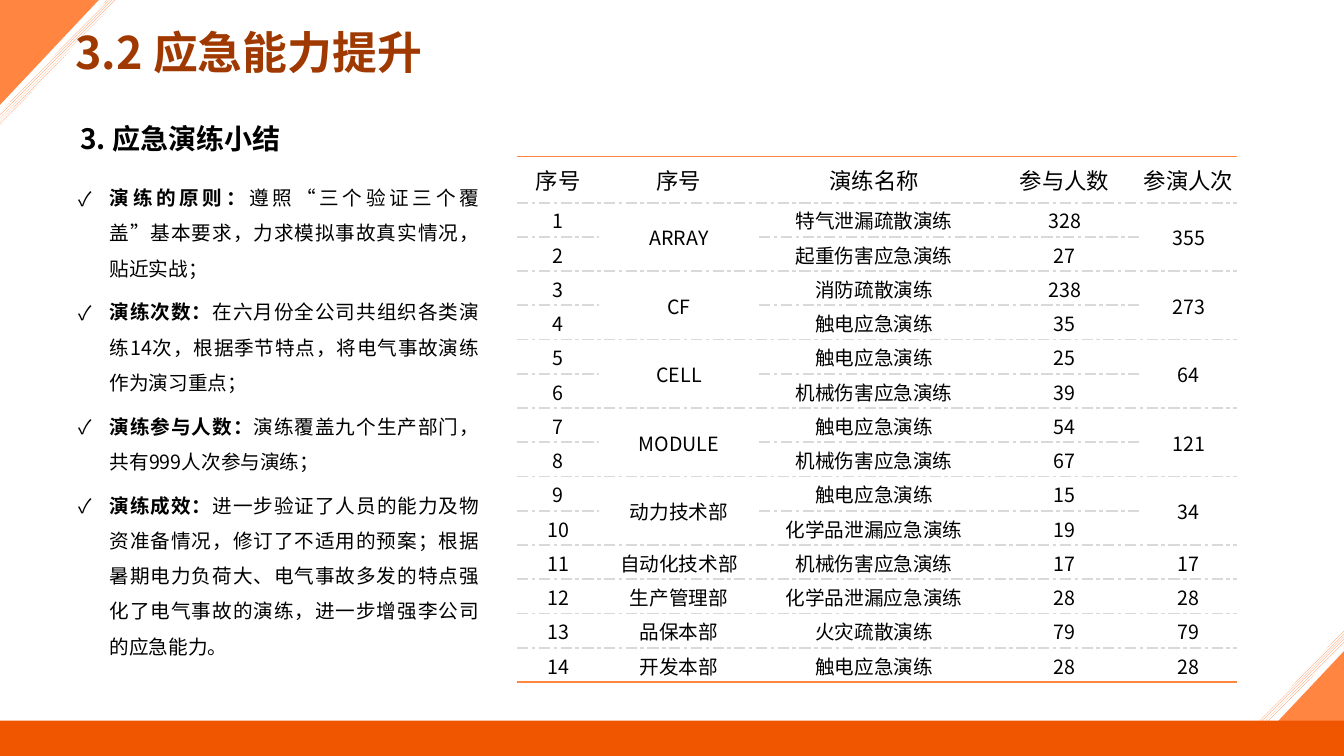
"""Builds the slide that sums up the emergency drills."""
from lxml import etree
from pptx import Presentation
from pptx.dml.color import RGBColor
from pptx.enum.dml import MSO_PATTERN
from pptx.enum.shapes import MSO_SHAPE
from pptx.enum.text import MSO_ANCHOR, PP_ALIGN
from pptx.oxml.ns import qn
from pptx.util import Inches, Pt

TITLE = "3.2 应急能力提升"
HEADING = "3. 应急演练小结"
POINTS = [
    ("演练的原则：", "遵照“三个验证三个覆盖”基本要求，力求模拟事故真实情况，贴近实战；"),
    ("演练次数：", "在六月份全公司共组织各类演练14次，根据季节特点，将电气事故演练作为演习重点；"),
    ("演练参与人数：", "演练覆盖九个生产部门，共有999人次参与演练；"),
    ("演练成效：", "进一步验证了人员的能力及物资准备情况，修订了不适用的预案；根据暑期电力负荷大、"
     "电气事故多发的特点强化了电气事故的演练，进一步增强李公司的应急能力。"),
]
HEADERS = ["序号", "序号", "演练名称", "参与人数", "参演人次"]
DEPARTMENTS = [
    ("ARRAY", 355, [("特气泄漏疏散演练", 328), ("起重伤害应急演练", 27)]),
    ("CF", 273, [("消防疏散演练", 238), ("触电应急演练", 35)]),
    ("CELL", 64, [("触电应急演练", 25), ("机械伤害应急演练", 39)]),
    ("MODULE", 121, [("触电应急演练", 54), ("机械伤害应急演练", 67)]),
    ("动力技术部", 34, [("触电应急演练", 15), ("化学品泄漏应急演练", 19)]),
    ("自动化技术部", 17, [("机械伤害应急演练", 17)]),
    ("生产管理部", 28, [("化学品泄漏应急演练", 28)]),
    ("品保本部", 79, [("火灾疏散演练", 79)]),
    ("开发本部", 28, [("触电应急演练", 28)]),
]
COLUMN_WIDTHS = [0.81, 1.59, 2.28, 1.5, 0.96]
HEADER_HEIGHT, ROW_HEIGHT = 0.46, 0.34
TABLE_LEFT, TABLE_TOP = 5.13, 1.55
SLIDE_WIDTH, SLIDE_HEIGHT = 13.33, 7.5
CORNER = [(0, 0), (0.98, 0), (0, 1.04)]
STRIPE = [(1.06, 0), (1.16, 0), (0, 1.25), (0, 1.12)]

FONT = "Noto Sans CJK SC"
NO_GRID_STYLE = "{2D5ABB26-0587-4C30-8999-92F81FD0307C}"
BLACK = RGBColor(0x00, 0x00, 0x00)
WHITE = RGBColor(0xFF, 0xFF, 0xFF)
BROWN = RGBColor(0xA0, 0x39, 0x00)
ORANGE = RGBColor(0xFF, 0x85, 0x41)
DEEP_ORANGE = RGBColor(0xF0, 0x56, 0x00)
GRAY = RGBColor(0xD9, 0xD9, 0xD9)
OUTER_RULE = (ORANGE, 1, "solid")
INNER_RULE = (GRAY, 1.5, "lgDashDot")
LIGHT_DIAGONAL = MSO_PATTERN.LIGHT_UPWARD_DIAGONAL
RECTANGLE = MSO_SHAPE.RECTANGLE
MIDDLE = MSO_ANCHOR.MIDDLE
CENTER, JUSTIFY, LEFT = PP_ALIGN.CENTER, PP_ALIGN.JUSTIFY, PP_ALIGN.LEFT


def add_text(paragraph, text, size=14, color=BLACK, bold=False, align=LEFT):
    paragraph.alignment = align
    run = paragraph.add_run()
    run.text = text
    run.font.size, run.font.bold, run.font.name = Pt(size), bold, FONT
    run.font.color.rgb = color
    etree.SubElement(run.font._element, qn("a:ea"), typeface=FONT)


def add_box(slide, left, top, width, height):
    box = slide.shapes.add_textbox(*map(Inches, (left, top, width, height)))
    box.text_frame.word_wrap = True
    return box.text_frame


def add_corner_part(slide, points, turned, striped):
    if turned:
        points = [(SLIDE_WIDTH - x, SLIDE_HEIGHT - y) for x, y in points]
    corners = [(Inches(x), Inches(y)) for x, y in points]
    builder = slide.shapes.build_freeform(*corners[0])
    builder.add_line_segments(corners[1:], close=True)
    shape = builder.convert_to_shape()
    shape.shadow.inherit = False
    shape.line.fill.background()
    if striped:
        shape.fill.patterned()
        shape.fill.pattern = LIGHT_DIAGONAL
        shape.fill.fore_color.rgb, shape.fill.back_color.rgb = ORANGE, WHITE
    else:
        shape.fill.solid()
        shape.fill.fore_color.rgb = ORANGE


def set_rule(cell, side, rule):
    color, width, dash = rule
    line = etree.SubElement(cell._tc.get_or_add_tcPr(), qn("a:" + side), w=str(Pt(width)))
    fill = etree.SubElement(line, qn("a:solidFill"))
    etree.SubElement(fill, qn("a:srgbClr"), val=str(color))
    etree.SubElement(line, qn("a:prstDash"), val=dash)


def fill_cell(cell, text, size=14):
    cell.margin_left = cell.margin_right = cell.margin_top = Inches(0.01)
    cell.margin_bottom = 0
    cell.vertical_anchor = MIDDLE
    add_text(cell.text_frame.paragraphs[0], str(text), size=size, align=CENTER)


def add_drill_table(slide):
    drill_count = sum(len(drills) for _, _, drills in DEPARTMENTS)
    height = HEADER_HEIGHT + drill_count * ROW_HEIGHT
    frame = slide.shapes.add_table(
        drill_count + 1, len(HEADERS), Inches(TABLE_LEFT), Inches(TABLE_TOP),
        Inches(sum(COLUMN_WIDTHS)), Inches(height))
    table = frame.table
    table.first_row = table.horz_banding = False
    table._tbl.tblPr.find(qn("a:tableStyleId")).text = NO_GRID_STYLE
    for column, width in zip(table.columns, COLUMN_WIDTHS):
        column.width = Inches(width)
    for index, row in enumerate(table.rows):
        row.height = Inches(ROW_HEIGHT if index else HEADER_HEIGHT)

    for column, header in enumerate(HEADERS):
        fill_cell(table.cell(0, column), header, size=16)
    row = 1
    for department, total, drills in DEPARTMENTS:
        last = row + len(drills) - 1
        for column, value in ((1, department), (4, total)):
            if last > row:
                table.cell(row, column).merge(table.cell(last, column))
            fill_cell(table.cell(row, column), value)
        for number, (drill, people) in enumerate(drills, row):
            for column, value in ((0, number), (2, drill), (3, people)):
                fill_cell(table.cell(number, column), value)
        row = last + 1

    for row in range(drill_count + 1):
        for column in range(len(HEADERS)):
            cell = table.cell(row, column)
            if not cell.is_spanned:
                set_rule(cell, "lnT", INNER_RULE if row else OUTER_RULE)
            set_rule(cell, "lnB", INNER_RULE if row < drill_count else OUTER_RULE)
            cell.fill.background()


def add_points(slide):
    frame = add_box(slide, 0.68, 1.68, 4.17, 4.95)
    for index, (label, text) in enumerate(POINTS):
        paragraph = frame.add_paragraph() if index else frame.paragraphs[0]
        add_text(paragraph, label, bold=True, align=JUSTIFY)
        add_text(paragraph, text, align=JUSTIFY)
        paragraph.line_spacing, paragraph.space_before = 1.5, Pt(6)
        properties = paragraph._p.get_or_add_pPr()
        properties.set("marL", str(Inches(0.31)))
        properties.set("indent", str(-Inches(0.31)))
        etree.SubElement(properties, qn("a:buFont"), typeface=FONT)
        etree.SubElement(properties, qn("a:buChar"), char="✓")


def main():
    presentation = Presentation()
    presentation.slide_width = Inches(SLIDE_WIDTH)
    presentation.slide_height = Inches(SLIDE_HEIGHT)
    slide = presentation.slides.add_slide(presentation.slide_layouts[6])

    for turned in (True, False):
        add_corner_part(slide, CORNER, turned, striped=False)
        add_corner_part(slide, STRIPE, turned, striped=True)

    title = add_box(slide, 0.65, 0.26, 10.87, 0.62).paragraphs[0]
    title.line_spacing = 0.9
    add_text(title, TITLE, size=32, color=BROWN, bold=True)
    heading = add_box(slide, 0.7, 1.16, 4.44, 0.44).paragraphs[0]
    add_text(heading, HEADING, size=20, bold=True)
    add_drill_table(slide)
    add_points(slide)

    footer = slide.shapes.add_shape(
        RECTANGLE, 0, Inches(7.15), Inches(SLIDE_WIDTH), Inches(0.39))
    footer.shadow.inherit = False
    footer.fill.solid()
    footer.fill.fore_color.rgb = DEEP_ORANGE
    footer.line.fill.background()
    presentation.save("out.pptx")


if __name__ == "__main__":
    main()
